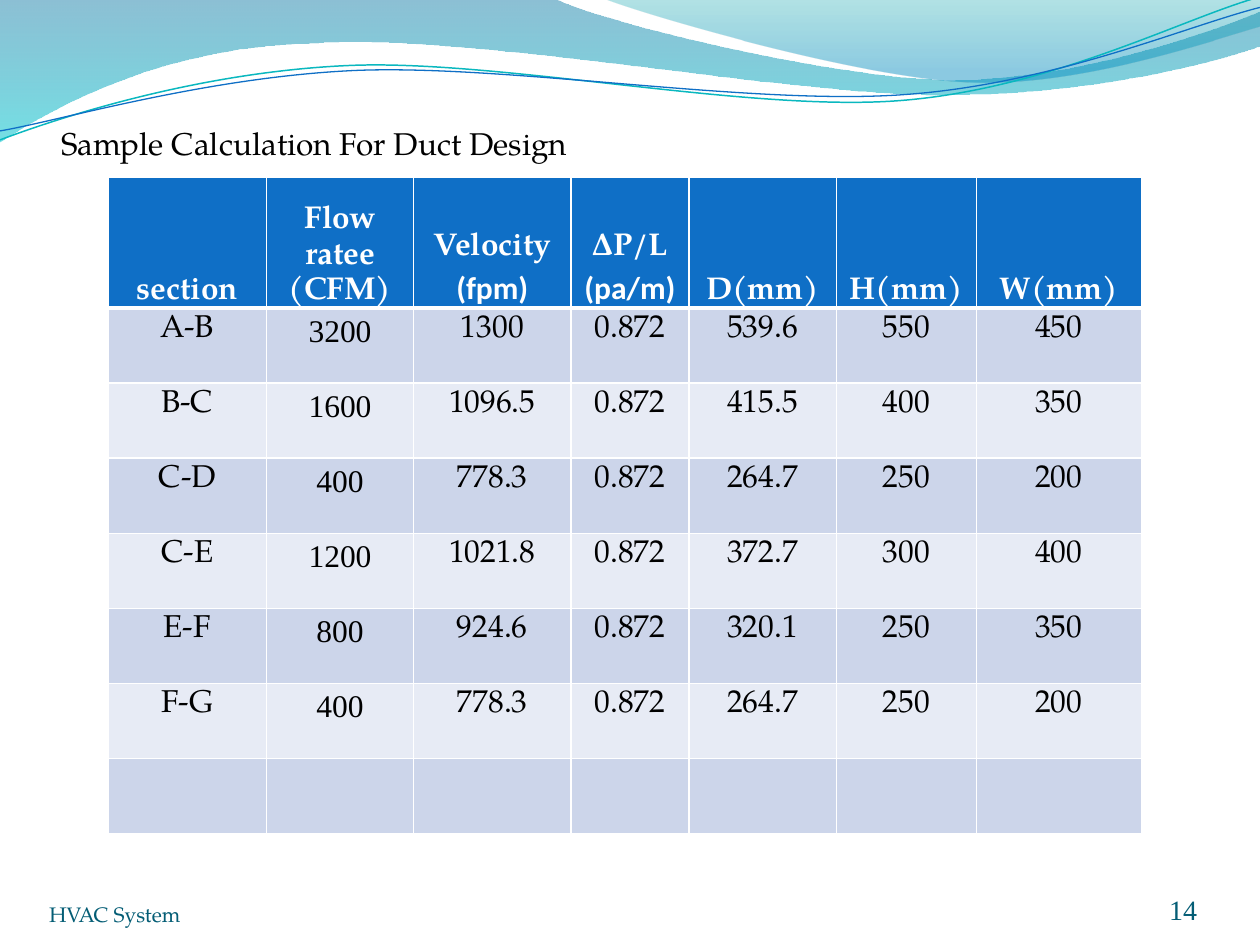
import math
from dataclasses import dataclass

from lxml import etree
from pptx import Presentation, util as u
from pptx.dml.color import RGBColor
from pptx.enum import text
from pptx.oxml.ns import qn

COLORS = {
    "white": "FFFFFF", "black": "000000", "footer": "045D75",
    "header": "0F6FC6", "odd": "CCD5EA", "even": "E7EBF5",
    "teal_line": "0AB8BF", "blue_line": "0F6FC6",
    "deep_blue": "0074A1", "cyan": "00C6CF", "sea": "00A1A9", "sky": "008BBF",
}
SERIF, TIMES, SANS = "TeX Gyre Pagella", "Times New Roman", "Calibri"
TILT = 357.3
COLUMNS = (3.19, 2.97, 3.17, 2.38, 2.97, 2.82, 3.33)
HEADER_HEIGHT, BODY_HEIGHT = 2.53, 10.6
HEADER = ("section", "Flow ratee\n(CFM)", "Velocity\n(fpm)", "∆P/L\n(pa/m)",
          "D(mm)", "H(mm)", "W(mm)")
SANS_LABELS = ("(fpm)", "(pa/m)")
ROWS = (
    ("A-B", "3200", "1300", "0.872", "539.6", "550", "450"),
    ("B-C", "1600", "1096.5", "0.872", "415.5", "400", "350"),
    ("C-D", "400", "778.3", "0.872", "264.7", "250", "200"),
    ("C-E", "1200", "1021.8", "0.872", "372.7", "300", "400"),
    ("E-F", "800", "924.6", "0.872", "320.1", "250", "350"),
    ("F-G", "400", "778.3", "0.872", "264.7", "250", "200"),
    ("",) * len(COLUMNS),
)


@dataclass
class Stop:
    position: float
    color: str
    opacity: int


@dataclass
class Wave:
    start: tuple
    segments: tuple
    stops: tuple = ()
    line: str = ""
    width: float = 0
    center: tuple = (0, 0)
    rotation: float = 0


@dataclass
class Label:
    words: str
    box: tuple
    size: int
    color: str
    font: str = SERIF
    align: text.PP_ALIGN = text.PP_ALIGN.LEFT
    footer: bool = True


WAVES = (
    Wave((0, 0), (
        ((11.18, -0.03),),
        ((12.09, 0.43), (16.87, 1.6), (19.25, 1.6)),
        ((21.67, 1.6), (24.33, 0.66), (25.4, 0.23)),
        ((25.43, 0.91),),
        ((24.97, 1.12), (22.1, 1.93), (18.95, 1.91)),
        ((15.8, 1.91), (9.7, 0.71), (6.53, 0.86)),
        ((3.28, 0.91), (1.17, 2.11), (-0.03, 2.87)),
    ), stops=(Stop(0, "deep_blue", 45), Stop(1, "cyan", 55))),
    Wave((12.17, -0.03), (
        ((12.93, 0.28), (17.32, 1.57), (19.53, 1.65)),
        ((21.74, 1.75), (24.41, 0.81), (25.4, 0.53)),
        ((25.4, 0),),
    ), stops=(Stop(0, "sea", 30), Stop(0.8, "sky", 45))),
    Wave((0, 2.82), (
        ((1.22, 2.36), (4.01, 1.45), (7.04, 1.32)),
        ((10.03, 1.19), (15.06, 2.26), (18.11, 2.03)),
        ((21.16, 1.8), (23.83, 0.38), (25.35, -0.05)),
    ), line="teal_line", width=0.85, center=(12.67, 1.46), rotation=TILT),
    Wave((0, 2.64), (
        ((1.19, 2.44), (4.17, 1.55), (7.19, 1.42)),
        ((10.24, 1.3), (15.16, 2.13), (18.21, 1.91)),
        ((21.23, 1.7), (23.9, 0.53), (25.4, 0.15)),
    ), line="blue_line", width=0.75, center=(12.69, 1.5), rotation=TILT),
)
LABELS = (
    Label("HVAC System", (0.99, 17.66, 9.32, 1.02), 12, "footer"),
    Label("14", (22.02, 17.66, 2.11, 1.02), 16, "footer", TIMES, text.PP_ALIGN.RIGHT),
    Label("Sample Calculation For Duct Design", (0.99, 2.37, 11.71, 1.02), 18,
          "black", footer=False),
)


def rgb(name: str) -> RGBColor:
    return RGBColor.from_string(COLORS[name])


def level(point: tuple, wave: Wave) -> tuple:
    angle = math.radians(-wave.rotation)
    cx, cy = wave.center
    x, y = point[0] - cx, point[1] - cy
    return (u.Cm(cx + x * math.cos(angle) - y * math.sin(angle)),
            u.Cm(cy + x * math.sin(angle) + y * math.cos(angle)))


def bend(sp, segments: tuple) -> None:
    edges = iter(list(sp._element.iter(qn("a:lnTo"))))
    for segment in segments:
        group = [next(edges) for _ in segment]
        if len(group) == 3:
            curve = etree.Element(qn("a:cubicBezTo"))
            group[0].addprevious(curve)
            for edge in group:
                curve.append(edge[0])
                edge.getparent().remove(edge)


def draw_wave(slide, wave: Wave) -> None:
    builder = slide.shapes.build_freeform(*level(wave.start, wave))
    points = [level(point, wave) for segment in wave.segments for point in segment]
    builder.add_line_segments(points, close=bool(wave.stops))
    sp = builder.convert_to_shape()
    bend(sp, wave.segments)
    sp.rotation = wave.rotation
    sp.shadow.inherit = False
    if wave.line:
        sp.fill.background()
        sp.line.color.rgb = rgb(wave.line)
        sp.line.width = u.Pt(wave.width)
        return
    sp.line.fill.background()
    sp.fill.gradient()
    sp.fill.gradient_angle = 270
    for target, stop in zip(sp.fill.gradient_stops, wave.stops):
        target.position = stop.position
        target.color.rgb = rgb(stop.color)
    for color, stop in zip(sp._element.spPr.iter(qn("a:srgbClr")), wave.stops):
        etree.SubElement(color, qn("a:alpha"), val=str(stop.opacity * 1000))


def style(p, size: int, color: str, font: str, align, bold: bool = False) -> None:
    p.alignment = align
    p.font.size = u.Pt(size)
    p.font.name = font
    p.font.bold = bold
    p.font.color.rgb = rgb(color)


def draw_label(slide, label: Label) -> None:
    tf = slide.shapes.add_textbox(*map(u.Cm, label.box)).text_frame
    tf.word_wrap = True
    if label.footer:
        tf.vertical_anchor = text.MSO_ANCHOR.BOTTOM
        tf.margin_left = tf.margin_right = tf.margin_top = tf.margin_bottom = 0
    tf.text = label.words
    style(tf.paragraphs[0], label.size, label.color, label.font, label.align)


def add_borders(cell, top: float, bottom: float) -> None:
    tc_pr = cell._tc.get_or_add_tcPr()
    for i, (side, width) in enumerate(zip("LRTB", (1, 1, top, bottom))):
        ln = etree.Element(qn(f"a:ln{side}"), w=str(u.Pt(width)))
        fill = etree.SubElement(ln, qn("a:solidFill"))
        etree.SubElement(fill, qn("a:srgbClr"), val=COLORS["white"])
        tc_pr.insert(i, ln)


def fill_cell(cell, words: str, row: int, column: int) -> None:
    header = row == 0
    cell.fill.solid()
    cell.fill.fore_color.rgb = rgb("header" if header else ("even", "odd")[row % 2])
    if header:
        cell.vertical_anchor = text.MSO_ANCHOR.BOTTOM
        cell.margin_left = cell.margin_right = u.Cm(0.18)
        cell.margin_top = cell.margin_bottom = 0
    cell.text = words
    for p in cell.text_frame.paragraphs:
        font = SANS if p.text in SANS_LABELS else SERIF
        if not header and column == 1:
            font = TIMES
        style(p, 18, "white" if header else "black", font, text.PP_ALIGN.CENTER, header)
        if header:
            p.line_spacing = 1.15
    add_borders(cell, 3 if row == 1 else 1, 3 if header else 1)


def draw_table(slide) -> None:
    content = (HEADER, *ROWS)
    frame = slide.shapes.add_table(len(content), len(COLUMNS), u.Cm(2.18), u.Cm(3.58),
                                   u.Cm(sum(COLUMNS)), u.Cm(HEADER_HEIGHT + BODY_HEIGHT))
    table = frame.table
    for column, width in zip(table.columns, COLUMNS):
        column.width = u.Cm(width)
    for i, row in enumerate(content):
        table.rows[i].height = u.Cm(BODY_HEIGHT / len(ROWS) if i else HEADER_HEIGHT)
        for j, words in enumerate(row):
            fill_cell(table.cell(i, j), words, i, j)


def main() -> None:
    """Build the duct design slide."""
    prs = Presentation()
    prs.slide_width, prs.slide_height = u.Cm(25.4), u.Cm(19.05)
    slide = prs.slides.add_slide(prs.slide_layouts[6])
    for wave in WAVES:
        draw_wave(slide, wave)
    for label in LABELS:
        draw_label(slide, label)
    draw_table(slide)
    prs.save("out.pptx")


if __name__ == "__main__":
    main()
